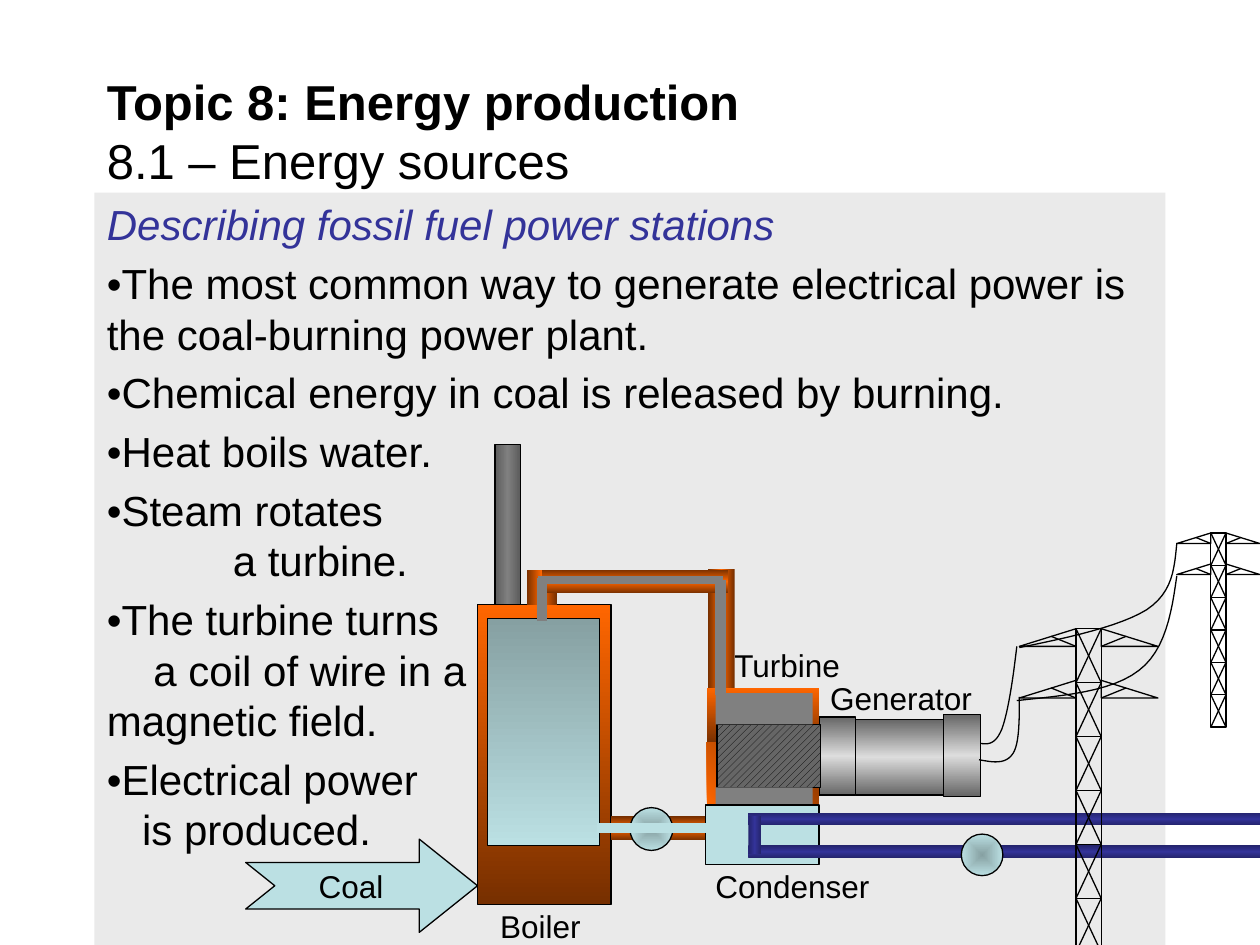
import pptx
import pptx.util
import pptx.dml.color
import pptx.enum.dml
import pptx.enum.shapes
import pptx.enum.text
import pptx.oxml
import pptx.oxml.ns

SHAPES = pptx.enum.shapes.MSO_SHAPE
COLUMNS, ROWS = 100, 75
STEEL = ("666666", "DDDDDD", "666666")
COPPER = ("762F00", "FF6600", "762F00")
FURNACE = ("FF6600", "762F00")
WATER = ("86A0A2", "BBE0E3")
COOLANT = ("24246D", "333399", "24246D")
CHIMNEY = ("5C5C5C", "808080", "5C5C5C")
STEAM, POOL = "808080", "BBE0E3"


def color(value):
    return pptx.dml.color.RGBColor.from_string(value)


def write(frame, text, size=18, ink="000000", bold=False, italic=False, before=0, hanging=0, indent=0):
    first = frame.paragraphs[0]
    paragraph = frame.add_paragraph() if first.runs else first
    paragraph.alignment = pptx.enum.text.PP_ALIGN.LEFT
    paragraph.space_before = pptx.util.Pt(before)
    properties = paragraph._p.get_or_add_pPr()
    properties.set("marL", str(pptx.util.Inches(hanging + indent)))
    properties.set("indent", str(-pptx.util.Inches(hanging)))
    for number, line in enumerate(text.split("\n")):
        if number:
            paragraph.add_line_break()
        run = paragraph.add_run()
        run.text = line
        run.font.name = "Arial"
        run.font.size = pptx.util.Pt(size)
        run.font.bold = bold
        run.font.italic = italic
        run.font.color.rgb = color(ink)


class Drawing:
    line_width = 0.75
    line_color = "000000"

    def __init__(self, presentation):
        self.slide = presentation.slides.add_slide(presentation.slide_layouts[6])
        self.shapes = self.slide.shapes
        self.column = presentation.slide_width / COLUMNS
        self.row = presentation.slide_height / ROWS

    def place(self, left, top, width, height):
        return [round(value * unit) for value, unit in
                zip((left, top, width, height), (self.column, self.row) * 2)]

    def outline(self, shape):
        shape.line.color.rgb = color(self.line_color)
        shape.line.width = pptx.util.Pt(self.line_width)

    def gradient(self, shape, colors, angle):
        last = len(colors) - 1
        stops = "".join(
            f'<a:gs pos="{100000 * number // last}"><a:srgbClr val="{value}"/></a:gs>'
            for number, value in enumerate(colors))
        if angle is None:
            direction = ('<a:path path="shape"><a:fillToRect l="50000" t="50000" '
                         'r="50000" b="50000"/></a:path>')
        else:
            direction = f'<a:lin ang="{angle * 60000}" scaled="0"/>'
        namespace = pptx.oxml.ns.nsdecls("a")
        element = pptx.oxml.parse_xml(
            f'<a:gradFill {namespace} rotWithShape="1"><a:gsLst>{stops}</a:gsLst>{direction}</a:gradFill>')
        properties = shape._element.spPr
        properties.replace(properties.find(pptx.oxml.ns.qn("a:noFill")), element)

    def shape(self, place, fill=None, angle=90, kind=SHAPES.RECTANGLE, lined=True, flipped=False):
        shape = self.shapes.add_shape(kind, *self.place(*place))
        shape.shadow.inherit = False
        shape.fill.background()
        if isinstance(fill, tuple):
            self.gradient(shape, fill, angle)
        elif fill:
            shape.fill.solid()
            shape.fill.fore_color.rgb = color(fill)
        if lined:
            self.outline(shape)
        else:
            shape.line.fill.background()
        if flipped:
            shape._element.spPr.find(pptx.oxml.ns.qn("a:xfrm")).set("flipH", "1")
        return shape

    def hatch(self, place, front, back):
        fill = self.shape(place).fill
        fill.patterned()
        fill.pattern = pptx.enum.dml.MSO_PATTERN.WIDE_UPWARD_DIAGONAL
        fill.fore_color.rgb = color(front)
        fill.back_color.rgb = color(back)

    def line(self, start, end, ink=line_color, width=line_width):
        connector = self.shapes.add_connector(
            pptx.enum.shapes.MSO_CONNECTOR.STRAIGHT, *self.place(*start, *end))
        connector.line.color.rgb = color(ink)
        connector.line.width = pptx.util.Pt(width)
        connector._element.spPr.append(
            pptx.oxml.parse_xml(f'<a:effectLst {pptx.oxml.ns.nsdecls("a")}/>'))

    def cable(self, *points, steps=12):
        track = [points[0]]
        for first in range(0, len(points) - 1, 3):
            corners = points[first:first + 4]
            for step in range(1, steps + 1):
                t = step / steps
                weights = ((1 - t) ** 3, 3 * t * (1 - t) ** 2, 3 * t * t * (1 - t), t ** 3)
                track.append(tuple(sum(weight * corner[axis] for weight, corner in zip(weights, corners))
                                   for axis in (0, 1)))
        track = [(x * self.column, y * self.row) for x, y in track]
        builder = self.shapes.build_freeform(*track[0])
        builder.add_line_segments(track[1:], close=False)
        shape = builder.convert_to_shape()
        shape.shadow.inherit = False
        shape.fill.background()
        self.outline(shape)

    def pylon(self, left, top, scale):
        width, height, arm, drop = 2 * scale, 4.28 * scale, 4.5 * scale, 1.4 * scale
        right = left + width
        for level in range(6):
            upper = top + level * height
            lower = upper + height
            self.shape((left, upper, width, height))
            self.line((right, upper), (left, lower))
            self.line((left, upper), (right, lower))
        for upper in (top, top + 4.1 * scale):
            for base, side in ((right, 1), (left, -1)):
                self.shape((min(base, base + side * arm), upper, arm, drop),
                           kind=SHAPES.RIGHT_TRIANGLE, flipped=side < 0)
                self.line((base, upper + drop), (base + side * arm * 0.44, upper + drop * 0.43))

    def label(self, place, text, **style):
        frame = self.shapes.add_textbox(*self.place(*place)).text_frame
        frame.word_wrap = True
        write(frame, text, **style)
        return frame


def add_text(drawing):
    panel = drawing.shape((7.5, 15.3, 85, 59.7), "EAEAEA", lined=False).text_frame
    panel.word_wrap = True
    panel.vertical_anchor = pptx.enum.text.MSO_ANCHOR.TOP
    body = {"size": 24, "before": 4.8}
    write(panel, "Describing fossil fuel power stations", ink="333399", italic=True, **body)
    for text, hanging in (
        ("•The most common way to generate electrical power is the coal-burning power plant.", 0),
        ("•Chemical energy in coal is released by burning.", 0),
        ("•Heat boils water.", 0),
        ("•Steam rotates\na turbine.", 1),
        ("•The turbine turns\na coil of wire in a", 0.37),
    ):
        write(panel, text, hanging=hanging, **body)
    write(panel, "magnetic field.", size=24)
    write(panel, "•Electrical power\nis produced.", hanging=0.28, **body)
    title = drawing.label((7.5, 5.8, 85, 9.1), "Topic 8: Energy production", size=28, bold=True)
    write(title, "8.1 – Energy sources", size=28)
    title.vertical_anchor = pptx.enum.text.MSO_ANCHOR.MIDDLE


def add_plant(drawing):
    drawing.shape((37.9, 48, 10.6, 23.8), FURNACE)
    drawing.label((38.7, 71.5, 9.2, 4), "Boiler")
    for place in ((67.9, 57.1, 7.2, 6), (65, 56.9, 2.9, 6.2), (74.9, 56.7, 2.9, 6.5)):
        drawing.shape(place, STEEL)
    for place, fill, angle in (
        ((56.2, 45.2, 2.1, 9.4), COPPER, 0),
        ((41.8, 45.2, 2.4, 2.8), COPPER, 0),
        ((43, 45.2, 14.8, 1.9), COPPER, 90),
        ((48.5, 64.8, 7.6, 1.9), COPPER, 90),
        ((56.1, 54.6, 8.9, 4.4), FURNACE, 90),
        ((56.1, 58.9, 8.9, 5), FURNACE, 315),
    ):
        drawing.shape(place, fill, angle, lined=False)
    drawing.shape((56, 63.9, 9, 4.7), POOL)
    drawing.hatch((56.9, 57.5, 8.2, 5), "000000", "666666")
    drawing.label((57.3, 50.8, 12.7, 4), "Turbine")
    drawing.label((64.9, 53.4, 15, 4), "Generator")
    drawing.label((55.8, 68.3, 15, 4), "Condenser")
    for place, angle in (((59.4, 67.1, 40.6, 1), 90), ((59.4, 64.5, 40.6, 1), 90), ((59.4, 64.8, 1, 3), 0)):
        drawing.shape(place, COOLANT, angle, lined=False)
    drawing.shape((76.3, 66.2, 3.3, 3.3), WATER, None, SHAPES.OVAL)


def add_grid(drawing):
    drawing.pylon(85.4, 49.9, 1)
    drawing.pylon(96.1, 42.3, 0.6)
    drawing.cable((93.4, 43.1), (93.2, 45.1), (93.1, 47), (91, 48.4), (88.9, 49.7), (84.9, 50.6), (80.9, 51.4))
    drawing.cable((93.4, 45.7), (93, 48.6), (92.5, 51.6), (90.4, 53.2), (88.2, 54.9), (84.5, 55.2), (80.7, 55.6))
    drawing.cable((80.7, 51.3), (80.4, 53.9), (80, 56.6), (79.5, 57.9), (79, 59.1), (78.4, 59.1), (77.8, 59))
    drawing.cable((80.9, 55.3), (80.9, 57.2), (80.9, 59), (80.4, 59.8), (79.8, 60.7), (78.8, 60.5), (77.7, 60.3))


def add_boiler_circuit(drawing):
    drawing.shape((50, 64.1, 3.4, 3.4), WATER, None, SHAPES.OVAL)
    drawing.shape((38.7, 49.1, 8.9, 18), WATER)
    arrow = drawing.shape((19.5, 66.6, 18.4, 7.4), POOL, kind=SHAPES.NOTCHED_RIGHT_ARROW)
    arrow.adjustments[0], arrow.adjustments[1] = 0.5, 0.625
    drawing.label((24.3, 68.3, 9.2, 4), "Coal")
    drawing.shape((39.3, 35.3, 2, 12.7), CHIMNEY, 0)
    drawing.line((43, 49.3), (43, 45.9), STEAM, 6)
    drawing.line((42.7, 46), (57.4, 46), STEAM, 4.5)
    drawing.line((57.2, 46), (57.2, 55.2), STEAM, 6)
    for top, height in ((55, 2.5), (62.5, 1.3)):
        drawing.shape((56.8, top, 7.7, height), STEAM, lined=False)
    drawing.line((56.5, 65.7), (47.4, 65.7), POOL, 6)


def main():
    presentation = pptx.Presentation()
    presentation.slide_width = pptx.util.Inches(10)
    presentation.slide_height = pptx.util.Inches(7.5)
    drawing = Drawing(presentation)
    for add_part in (add_text, add_plant, add_grid, add_boiler_circuit):
        add_part(drawing)
    presentation.save("out.pptx")


if __name__ == "__main__":
    main()
